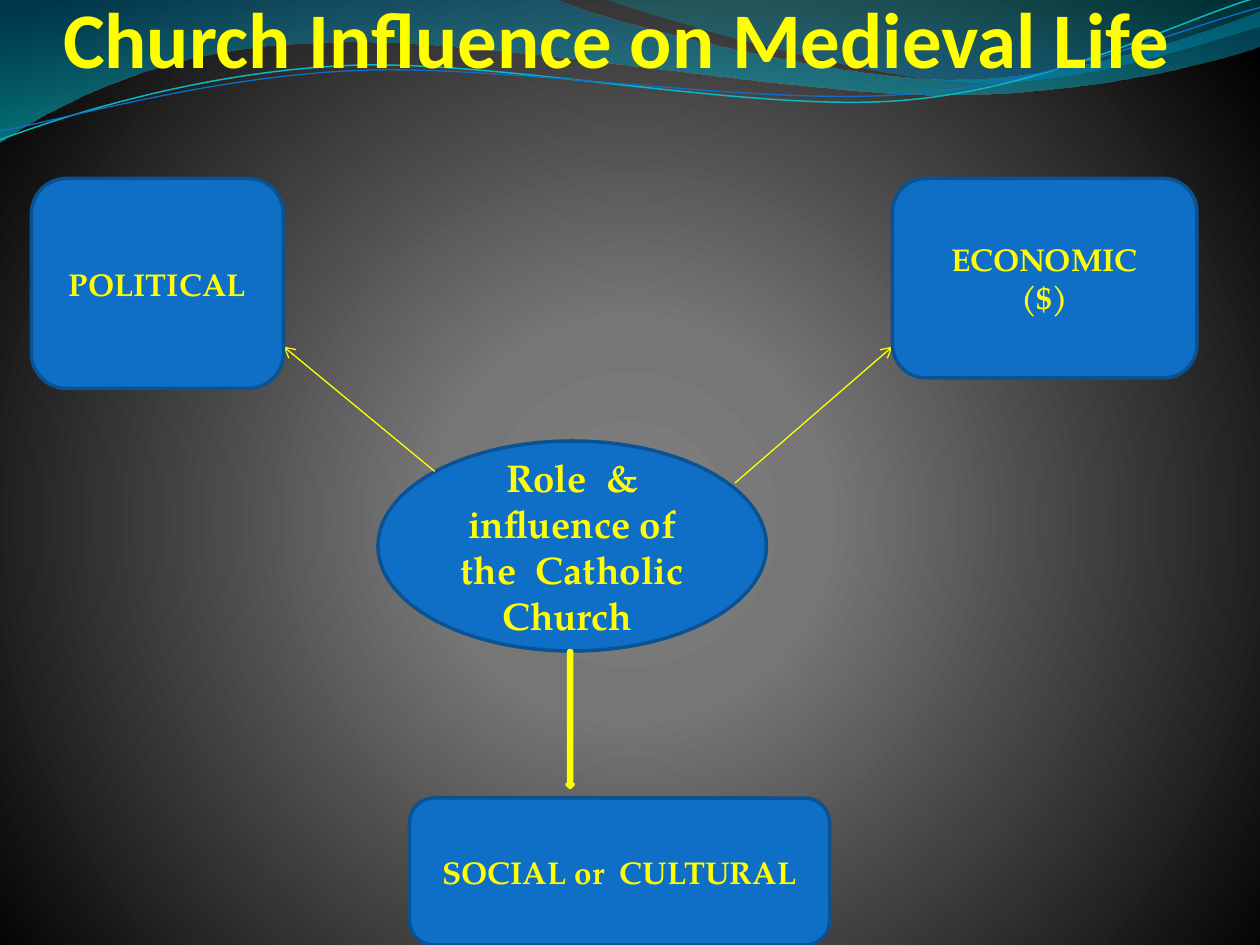
"""Build a slide mapping the influence of the Church on medieval life."""
from dataclasses import dataclass
from typing import NamedTuple

from lxml.etree import SubElement
from pptx import Presentation
from pptx.dml.color import RGBColor
from pptx.enum.shapes import MSO_CONNECTOR as Connector, MSO_SHAPE as Preset
from pptx.enum.text import MSO_ANCHOR as Anchor, MSO_AUTO_SIZE as AutoSize, PP_ALIGN as Align
from pptx.oxml import parse_xml
from pptx.oxml.ns import nsdecls, qn
from pptx.util import Emu, Pt

PX = 7620
WAVE_UNIT = 9144
VERTICAL = '<a:lin ang="5400000" scaled="1"/>'
RADIAL = '<a:path path="circle"><a:fillToRect l="10000" t="110000" r="10000" b="100000"/></a:path>'


@dataclass(frozen=True)
class Theme:
    """Colours, fonts and sizes of the slide."""
    text: str = "FFFF00"
    fill: str = "0F6FC6"
    outline: str = "0B5292"
    cyan: str = "0AB8BF"
    title_font: str = "Calibri"
    body_font: str = "TeX Gyre Pagella"
    title_size: int = 45
    center_size: int = 22
    box_size: int = 18
    outline_width: float = 2
    arrow_width: float = 0.75


class Stop(NamedTuple):
    """A gradient stop; position and opacity in percent."""
    position: int
    color: str
    opacity: int = 100


class Node(NamedTuple):
    """A labelled shape of the diagram."""
    preset: Preset
    left: int
    top: int
    width: int
    height: int
    text: str
    size: int


class Wave(NamedTuple):
    """A curved band or line; a step is a line (1 point) or a curve (3 points)."""
    start: tuple
    steps: tuple
    stops: tuple = ()
    color: str = ""
    width: float = 0


THEME = Theme()
BACKGROUND = (Stop(0, "7F7F7F"), Stop(25, "767676"), Stop(100, "000000"))
WAVES = (
    Wave((0, 0), (((440, -1),), ((476, 17), (664, 63), (758, 63)),
                  ((853, 63), (958, 26), (1000, 9)), ((1001, 36),),
                  ((983, 44), (870, 76), (746, 75)), ((622, 75), (382, 28), (257, 34)),
                  ((129, 36), (46, 83), (-1, 113)), ((0, 0),)),
         stops=(Stop(0, "0074A1", 45), Stop(100, "00C6CF", 55))),
    Wave((479, -1), (((509, 11), (682, 62), (769, 65)), ((856, 69), (961, 32), (1000, 21)),
                     ((1000, 0),), ((479, -1),)),
         stops=(Stop(0, "00A1A9", 30), Stop(80, "008BBF", 45))),
    Wave((0, 111), (((48, 93), (158, 57), (277, 52)), ((395, 47), (593, 89), (713, 80)),
                    ((833, 71), (938, 15), (998, -2))), color=THEME.cyan, width=0.85),
    Wave((0, 104), (((47, 96), (164, 61), (283, 56)), ((403, 51), (597, 84), (717, 75)),
                    ((836, 67), (941, 21), (1000, 6))), color=THEME.fill, width=0.75),
)
CENTER = Node(Preset.OVAL, 360, 420, 370, 200,
              "Role  & influence of the  Catholic Church ", THEME.center_size)
BOXES = (
    Node(Preset.ROUNDED_RECTANGLE, 30, 170, 240, 200, "POLITICAL", THEME.box_size),
    Node(Preset.ROUNDED_RECTANGLE, 850, 170, 290, 190, "ECONOMIC\n($)", THEME.box_size),
    Node(Preset.ROUNDED_RECTANGLE, 390, 760, 400, 140, "SOCIAL or  CULTURAL", THEME.box_size),
)
ARROWS = ((414, 449, 270, 330), (700, 460, 850, 330))


def px(*lengths: int) -> list[Emu]:
    """Turn px into EMU."""
    return [Emu(length * PX) for length in lengths]


def paint_gradient(element, stops: tuple, direction: str) -> None:
    """Replace the first solid fill inside an element with a gradient."""
    stop_xml = "".join(
        f'<a:gs pos="{stop.position * 1000}"><a:srgbClr val="{stop.color}">'
        f'<a:alpha val="{stop.opacity * 1000}"/></a:srgbClr></a:gs>' for stop in stops)
    gradient = parse_xml(f'<a:gradFill {nsdecls("a")} rotWithShape="1">'
                         f'<a:gsLst>{stop_xml}</a:gsLst>{direction}</a:gradFill>')
    solid = next(element.iter(qn("a:solidFill")))
    solid.getparent().replace(solid, gradient)


def bend(shape, steps: tuple) -> None:
    """Join each three-point step of a freeform into one cubic curve."""
    outline = next(shape._element.iter(qn("a:path")))
    segments = iter(outline.findall(qn("a:lnTo")))
    for step in steps:
        parts = [next(segments) for _ in step]
        if len(parts) == 3:
            curve = SubElement(outline, qn("a:cubicBezTo"))
            parts[0].addprevious(curve)
            for part in parts:
                curve.append(part[0])
                outline.remove(part)


def draw_wave(slide, wave: Wave) -> None:
    """Draw a gradient band or a thin curved line on the slide master."""
    builder = slide.shapes.build_freeform(*wave.start, scale=WAVE_UNIT)
    builder.add_line_segments([point for step in wave.steps for point in step],
                              close=bool(wave.stops))
    shape = builder.convert_to_shape()
    bend(shape, wave.steps)
    shape.shadow.inherit = False
    if wave.stops:
        shape.fill.solid()
        paint_gradient(shape._element.spPr, wave.stops, VERTICAL)
        shape.line.fill.background()
    else:
        shape.fill.background()
        style_line(shape.line, wave.color, wave.width)
    slide.slide_layout.slide_master.shapes._spTree.append(shape._element)


def style_line(line, color: str, width: float) -> None:
    """Set the colour and width of a line."""
    line.color.rgb = RGBColor.from_string(color)
    line.width = Pt(width)


def style_text(text_frame, font_name: str, size: int, alignment: Align) -> None:
    """Format every run of a text frame."""
    for paragraph in text_frame.paragraphs:
        paragraph.alignment = alignment
        for run in paragraph.runs:
            run.font.name = font_name
            run.font.size = Pt(size)
            run.font.bold = True
            run.font.color.rgb = RGBColor.from_string(THEME.text)


def draw_shape(slide, preset: Preset, bounds: tuple, outline: str):
    """Draw a filled and outlined preset shape."""
    shape = slide.shapes.add_shape(preset, *px(*bounds))
    shape.shadow.inherit = False
    shape.fill.solid()
    shape.fill.fore_color.rgb = RGBColor.from_string(THEME.fill)
    style_line(shape.line, outline, THEME.outline_width)
    return shape


def draw_node(slide, node: Node) -> None:
    """Draw a labelled node."""
    shape = draw_shape(slide, node.preset, node[1:5], THEME.outline)
    text_frame = shape.text_frame
    text_frame.text = node.text
    text_frame.word_wrap = True
    text_frame.vertical_anchor = Anchor.MIDDLE
    style_text(text_frame, THEME.body_font, node.size, Align.CENTER)


def draw_arrow(slide, ends: tuple) -> None:
    """Draw a thin arrow between two points."""
    connector = slide.shapes.add_connector(Connector.STRAIGHT, *px(*ends))
    style_line(connector.line, THEME.text, THEME.arrow_width)
    properties = connector._element.spPr
    SubElement(properties.find(qn("a:ln")), qn("a:tailEnd"), type="arrow")
    SubElement(properties, qn("a:effectLst"))


def place_title(slide, text: str) -> None:
    """Fill and place the title placeholder."""
    title = slide.shapes.title
    title.left, title.top, title.width, title.height = px(60, 0, 1080, 80)
    text_frame = title.text_frame
    text_frame.text = text
    text_frame.word_wrap = True
    text_frame.auto_size = AutoSize.NONE
    text_frame.vertical_anchor = Anchor.BOTTOM
    text_frame.margin_left = text_frame.margin_right = text_frame.margin_bottom = 0
    text_frame.margin_top = px(6)[0]
    style_text(text_frame, THEME.title_font, THEME.title_size, Align.LEFT)


def main() -> None:
    """Build and save the presentation."""
    presentation = Presentation()
    presentation.slide_width, presentation.slide_height = px(1200, 900)
    slide = presentation.slides.add_slide(presentation.slide_layouts[5])
    slide.background.fill.solid()
    paint_gradient(slide._element, BACKGROUND, RADIAL)
    for wave in WAVES:
        draw_wave(slide, wave)
    place_title(slide, "Church Influence on Medieval Life")
    draw_node(slide, CENTER)
    draw_shape(slide, Preset.DOWN_ARROW, (540, 620, 6, 130), THEME.text)
    for ends in ARROWS:
        draw_arrow(slide, ends)
    for box in BOXES:
        draw_node(slide, box)
    presentation.save("out.pptx")


if __name__ == "__main__":
    main()
